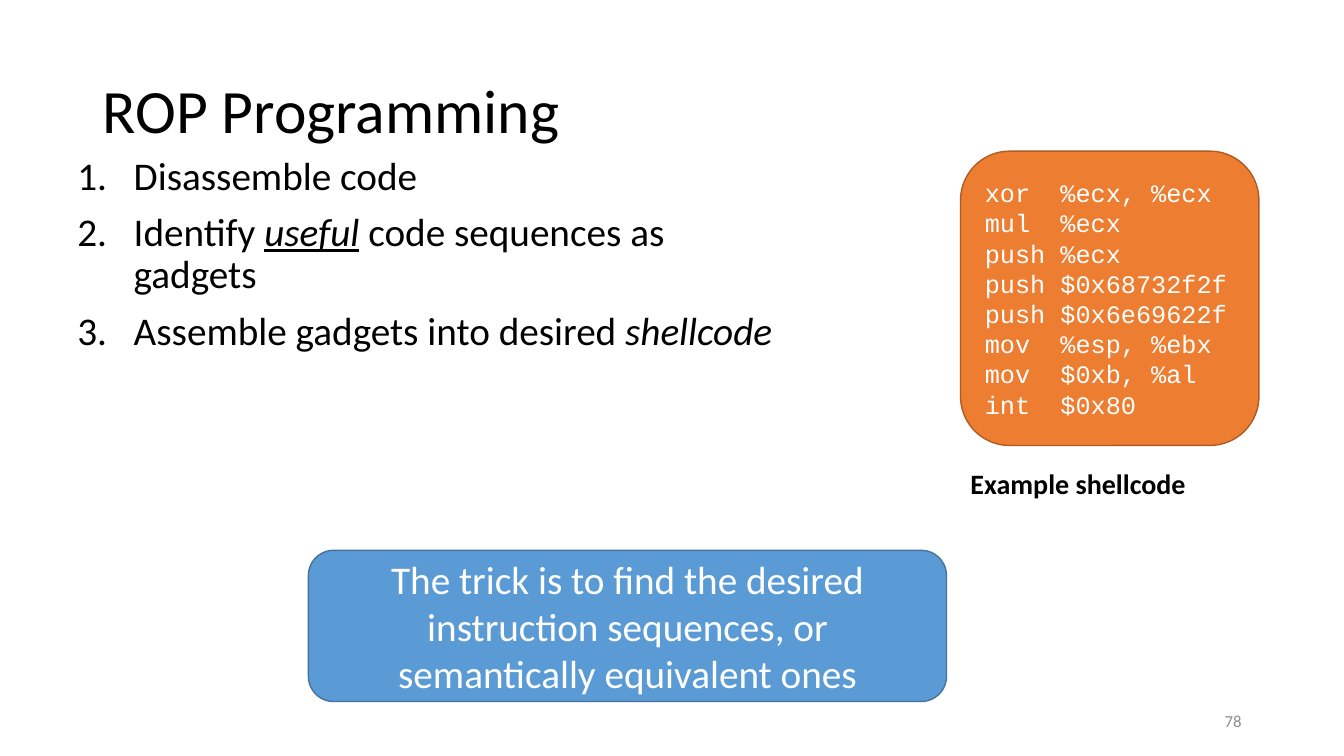
"""Build the ROP Programming slide."""
from lxml.etree import SubElement
from pptx import Presentation
from pptx.dml.color import RGBColor
from pptx.enum.shapes import MSO_SHAPE
from pptx.enum.text import MSO_ANCHOR, MSO_AUTO_SIZE, PP_ALIGN
from pptx.oxml.ns import qn
from pptx.util import Inches, Pt

COLORS = {
    "ink": "000000",
    "paper": "FFFFFF",
    "muted": "8C8C8C",
    "orange": "ED7D31",
    "orange_edge": "AF5C24",
    "blue": "5B9BD5",
    "blue_edge": "43739E",
}
STEPS = [
    [("Disassemble code", "")],
    [("Identify ", ""), ("useful", "iu"), (" code sequences as gadgets", "")],
    [("Assemble gadgets into desired ", ""), ("shellcode", "i")],
]
SHELLCODE = [
    "xor  %ecx, %ecx",
    "mul  %ecx",
    "push %ecx",
    "push $0x68732f2f",
    "push $0x6e69622f",
    "mov  %esp, %ebx",
    "mov  $0xb, %al",
    "int  $0x80",
]
TRICK = ("The trick is to find the desired instruction sequences, "
         "or semantically equivalent ones")


class SlideBuilder:
    """Hold the style and slide; areas are percentages of the slide size."""

    def __init__(self, deck):
        self.width, self.height = deck.slide_width, deck.slide_height
        self.slide = deck.slides.add_slide(deck.slide_layouts[1])
        self.font = "Calibri"

    def area(self, left, top, width, height):
        return (round(left * self.width / 100), round(top * self.height / 100),
                round(width * self.width / 100), round(height * self.height / 100))

    def place(self, holder, area):
        holder.left, holder.top, holder.width, holder.height = self.area(*area)

    def fill_text(self, frame, lines, size, color, align=PP_ALIGN.LEFT,
                  anchor=MSO_ANCHOR.MIDDLE, font=None, wrap=True):
        frame.auto_size = MSO_AUTO_SIZE.NONE
        frame.word_wrap = wrap
        frame.vertical_anchor = anchor
        for index, line in enumerate(lines):
            paragraph = frame.add_paragraph() if index else frame.paragraphs[0]
            paragraph.alignment = align
            for words, marks in line:
                run = paragraph.add_run()
                run.text = words
                run.font.name = font or self.font
                run.font.size = Pt(size)
                run.font.color.rgb = RGBColor.from_string(COLORS[color])
                run.font.bold = "b" in marks
                run.font.italic = "i" in marks
                run.font.underline = "u" in marks

    def title(self, area, words):
        heading = self.slide.shapes.title
        self.place(heading, area)
        self.fill_text(heading.text_frame, [[(words, "")]], 44, "ink")
        heading.text_frame.paragraphs[0].line_spacing = 0.9

    def numbered_list(self, area, items):
        body = self.slide.placeholders[1]
        self.place(body, area)
        self.fill_text(body.text_frame, items, 28, "ink", anchor=MSO_ANCHOR.TOP)
        for index, paragraph in enumerate(body.text_frame.paragraphs):
            properties = paragraph._p.get_or_add_pPr()
            properties.set("marL", str(Inches(0.56)))
            properties.set("indent", str(-Inches(0.56)))
            SubElement(properties, qn("a:buFont"), typeface="+mj-lt")
            SubElement(properties, qn("a:buAutoNum"), type="arabicPeriod")
            paragraph.line_spacing = 0.9
            paragraph.space_before = Pt(10 if index else 0)

    def label(self, area, words, size, color, marks="", **style):
        box = self.slide.shapes.add_textbox(*self.area(*area))
        self.fill_text(box.text_frame, [[(words, marks)]], size, color, **style)

    def card(self, area, fill, lines, size, **style):
        panel = self.slide.shapes.add_shape(
            MSO_SHAPE.ROUNDED_RECTANGLE, *self.area(*area))
        panel.shadow.inherit = False
        panel.fill.solid()
        panel.fill.fore_color.rgb = RGBColor.from_string(COLORS[fill])
        panel.line.color.rgb = RGBColor.from_string(COLORS[f"{fill}_edge"])
        panel.line.width = Pt(1)
        self.fill_text(panel.text_frame, [[(line, "")] for line in lines],
                       size, "paper", **style)


def main():
    deck = Presentation()
    deck.slide_width, deck.slide_height = Inches(13.33), Inches(7.5)
    builder = SlideBuilder(deck)
    builder.title((6.88, 5.33, 86.25, 19.33), "ROP Programming")
    builder.numbered_list((5, 20, 54.82, 68.27), STEPS)
    builder.label((70.63, 92.67, 22.5, 5.33), "78", 12, "muted",
                  align=PP_ALIGN.RIGHT)
    builder.card((71.47, 20, 22.2, 38.93), "orange", SHELLCODE, 18,
                 font="Courier New")
    builder.label((71.47, 61.07, 17.7, 5.87), "Example shellcode", 20, "ink",
                  marks="b", anchor=MSO_ANCHOR.TOP, wrap=False)
    builder.card((22.95, 72.8, 47.48, 20), "blue", [TRICK], 28,
                 align=PP_ALIGN.CENTER)
    deck.save("out.pptx")


if __name__ == "__main__":
    main()
